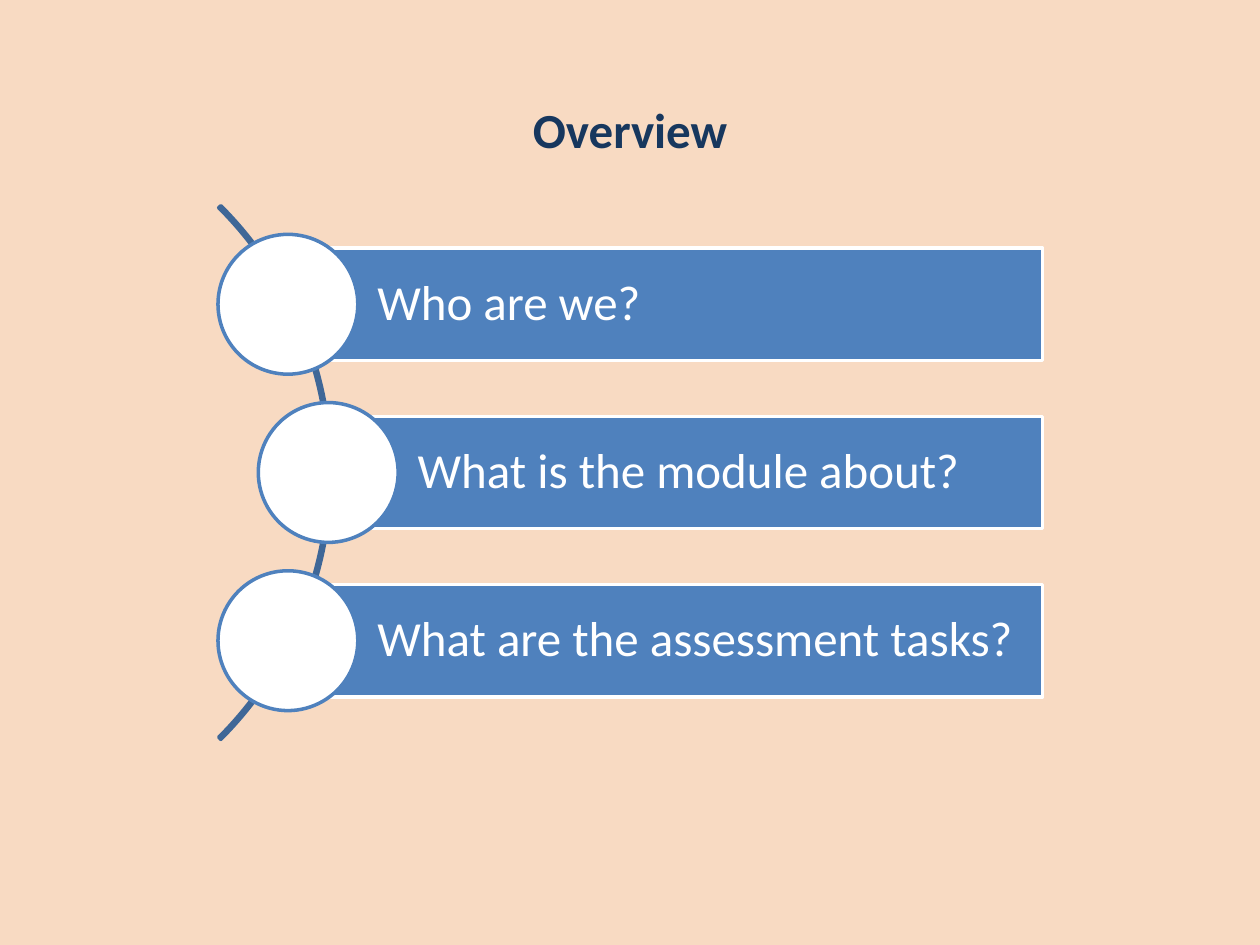
import pptx
import pptx.util
import pptx.dml.color
import pptx.enum.shapes
import pptx.enum.text

COLOURS = {
    "peach": "F8DAC2",
    "navy": "17375E",
    "blue": "4F81BD",
    "steel": "3F6797",
    "white": "FFFFFF",
}
COLUMNS, ROWS = 100, 75
SHAPES = pptx.enum.shapes.MSO_SHAPE
ALIGN = pptx.enum.text.PP_ALIGN
MIDDLE = pptx.enum.text.MSO_ANCHOR.MIDDLE


def colour(name):
    """Return the named colour as an RGB value."""
    return pptx.dml.color.RGBColor.from_string(COLOURS[name])


def set_format(target, values):
    """Set each format value on the target object."""
    for name, value in values.items():
        setattr(target, name, value)


class OverviewPage:
    """Holds the style and the current slide, measured on a 100 by 75 grid."""

    def __init__(self, deck):
        """Add a title-only page with a plain background."""
        self.cell_width = deck.slide_width / COLUMNS
        self.cell_height = deck.slide_height / ROWS
        self.font = {"name": "Calibri", "size": pptx.util.Pt(28)}
        self.line_width = pptx.util.Pt(2)
        self.page = deck.slides.add_slide(deck.slide_layouts[5])
        fill = self.page.background.fill
        fill.solid()
        fill.fore_color.rgb = colour("peach")

    def place(self, left, top, width, height):
        """Turn grid columns and rows into slide lengths."""
        return (
            round(left * self.cell_width),
            round(top * self.cell_height),
            round(width * self.cell_width),
            round(height * self.cell_height),
        )

    def label(self, box, text, ink, bold, frame, paragraph):
        """Put one formatted paragraph into a box."""
        set_format(box.text_frame, {"word_wrap": True, "vertical_anchor": MIDDLE, **frame})
        para = box.text_frame.paragraphs[0]
        set_format(para, paragraph)
        span = para.add_run()
        span.text = text
        set_format(span.font, {**self.font, "bold": bold})
        span.font.color.rgb = colour(ink)

    def title(self, text, *area):
        """Move and format the title placeholder."""
        box = self.page.shapes.title
        names = ("left", "top", "width", "height")
        set_format(box, dict(zip(names, self.place(*area))))
        self.label(box, text, "navy", True, {}, {"alignment": ALIGN.CENTER})

    def shape(self, kind, area, line, fill=None):
        """Add a preset shape with an outline and an optional fill."""
        box = self.page.shapes.add_shape(kind, *self.place(*area))
        box.shadow.inherit = False
        if fill:
            box.fill.solid()
            box.fill.fore_color.rgb = colour(fill)
        else:
            box.fill.background()
        box.line.color.rgb = colour(line)
        box.line.width = self.line_width
        return box

    def arc(self, centre_x, centre_y, radius):
        """Add the thin arc that links the topics."""
        area = (centre_x - radius, centre_y - radius, 2 * radius, 2 * radius)
        box = self.shape(SHAPES.BLOCK_ARC, area, "steel")
        for index, value in enumerate((189, 27, 0.004)):
            box.adjustments[index] = value

    def bar(self, text, left, right, centre_y, height):
        """Add a topic bar with its text."""
        area = (left, centre_y - height / 2, right - left, height)
        box = self.shape(SHAPES.RECTANGLE, area, "white", "blue")
        margin = pptx.util.Inches(0.08)
        frame = {
            "margin_left": pptx.util.Inches(0.71),
            "margin_right": margin,
            "margin_top": margin,
            "margin_bottom": margin,
        }
        paragraph = {"alignment": ALIGN.LEFT, "line_spacing": 0.9}
        self.label(box, text, "white", False, frame, paragraph)

    def disc(self, centre_x, centre_y, size):
        """Add a round marker."""
        area = (centre_x - size / 2, centre_y - size / 2, size, size)
        self.shape(SHAPES.OVAL, area, "blue", "white")


def main():
    """Build the overview slide."""
    deck = pptx.Presentation()
    deck.slide_width = pptx.util.Inches(10)
    deck.slide_height = pptx.util.Inches(7.5)
    overview = OverviewPage(deck)
    overview.title("Overview", 5, 4, 90, 12.5)

    middle, pitch = 37.5, 13.35
    overview.arc(-3.65, middle, 29.95)
    topics = (
        ("Who are we?", 22.85),
        ("What is the module about?", 26.05),
        ("What are the assessment tasks?", 22.85),
    )
    for index, (text, left) in enumerate(topics):
        centre_y = middle + (index - 1) * pitch
        overview.bar(text, left, 82.75, centre_y, 8.9)
        overview.disc(left, centre_y, 11.1)

    deck.save("out.pptx")


if __name__ == "__main__":
    main()
